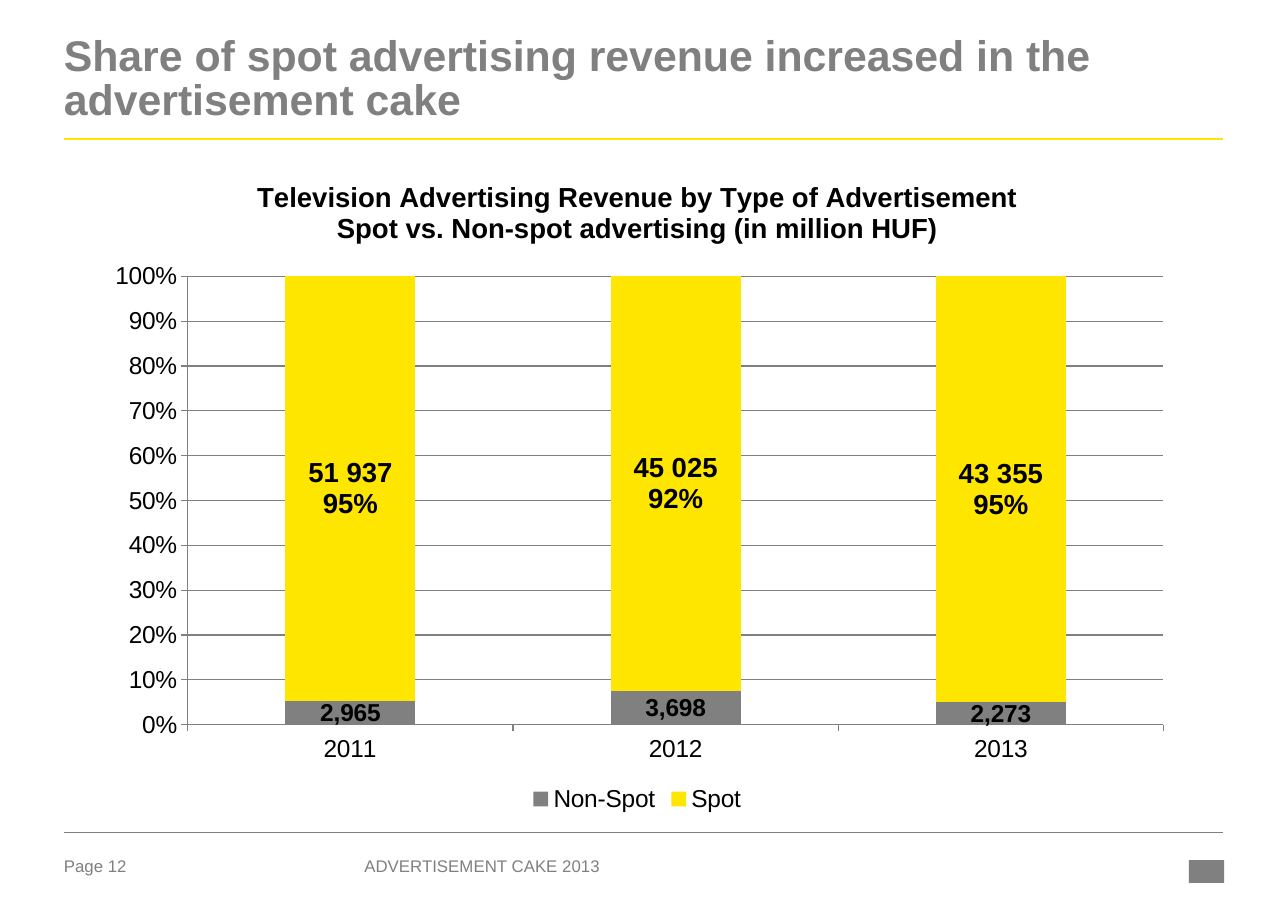
from dataclasses import dataclass

from lxml import etree
from pptx import Presentation
from pptx.chart.data import CategoryChartData
from pptx.dml.color import RGBColor
from pptx.enum.chart import XL_CHART_TYPE, XL_LABEL_POSITION, XL_LEGEND_POSITION, XL_TICK_MARK
from pptx.enum.shapes import MSO_CONNECTOR, MSO_SHAPE
from pptx.oxml.ns import qn
from pptx.util import Pt

STACKED = XL_CHART_TYPE.COLUMN_STACKED_100
CENTER = XL_LABEL_POSITION.CENTER
BOTTOM = XL_LEGEND_POSITION.BOTTOM
OUTSIDE = XL_TICK_MARK.OUTSIDE
STRAIGHT = MSO_CONNECTOR.STRAIGHT
BLOCK = MSO_SHAPE.RECTANGLE

YEARS = ["2011", "2012", "2013"]
SERIES = {"Non-Spot": [2965, 3698, 2273], "Spot": [51937, 45025, 43355]}
SHARES = ["51 937\n95%", "45 025\n92%", "43 355\n95%"]
HEADING = ("Television Advertising Revenue by Type of Advertisement\n"
           "Spot vs. Non-spot advertising (in million HUF)")
LEFT, RIGHT = 41.8, 800


@dataclass(frozen=True)
class Theme:
    """Colours, font and type sizes of the slide."""
    gray: RGBColor = RGBColor(0x80, 0x80, 0x80)
    yellow: RGBColor = RGBColor(0xFF, 0xE6, 0x00)
    black: RGBColor = RGBColor(0, 0, 0)
    face: str = "Arial"
    title: int = 28
    label: int = 18
    axis: int = 16
    small: int = 11


class Page:
    """Draws styled elements on one slide, in points."""

    def __init__(self, slide, theme):
        self.slide = slide
        self.theme = theme

    def style(self, font, size, color, bold=False):
        font.name = self.theme.face
        font.size = Pt(size)
        font.bold = bold
        font.color.rgb = color

    def fill(self, target, color):
        target.fill.solid()
        target.fill.fore_color.rgb = color

    def format(self, frame, size, color, bold=False):
        for par in frame.paragraphs:
            for run in par.runs:
                self.style(run.font, size, color, bold)

    def text(self, words, box, size, bold=False, space=1.0):
        frame = self.slide.shapes.add_textbox(*map(Pt, box)).text_frame
        frame.word_wrap = True
        frame.margin_left = frame.margin_right = 0
        frame.margin_top = frame.margin_bottom = 0
        frame.text = words
        frame.paragraphs[0].line_spacing = space
        self.format(frame, size, self.theme.gray, bold)

    def rule(self, top, color, width):
        line = self.slide.shapes.add_connector(
            STRAIGHT, Pt(LEFT), Pt(top), Pt(RIGHT), Pt(top))
        line.line.color.rgb = color
        line.line.width = Pt(width)
        etree.SubElement(line._element.spPr, qn("a:effectLst"))

    def block(self, box, color):
        shape = self.slide.shapes.add_shape(BLOCK, *map(Pt, box))
        shape.shadow.inherit = False
        self.fill(shape, color)
        shape.line.fill.background()

    def layout(self, chart, **parts):
        area = chart._chartSpace.chart.plotArea
        for old in area.findall(qn("c:layout")):
            area.remove(old)
        outer = etree.Element(qn("c:layout"))
        area.insert(0, outer)
        manual = etree.SubElement(outer, qn("c:manualLayout"))
        rules = {"layoutTarget": "inner", "xMode": "edge", "yMode": "edge", **parts}
        for name, value in rules.items():
            etree.SubElement(manual, qn(f"c:{name}")).set("val", str(value))

    def axis(self, axis):
        axis.major_tick_mark = OUTSIDE
        axis.format.line.color.rgb = self.theme.gray
        axis.format.line.width = Pt(0.75)
        self.style(axis.tick_labels.font, self.theme.axis, self.theme.black)

    def labels(self, series, size):
        labels = series.data_labels
        labels.show_value = True
        labels.number_format = "#,##0"
        labels.number_format_is_linked = False
        labels.position = CENTER
        self.style(labels.font, size, self.theme.black, True)

    def chart(self, box):
        theme = self.theme
        data = CategoryChartData()
        data.categories = YEARS
        for name, values in SERIES.items():
            data.add_series(name, values)
        chart = self.slide.shapes.add_chart(STACKED, *map(Pt, box), data).chart
        self.style(chart.font, theme.label, theme.black)
        chart.has_title = True
        chart.chart_title.include_in_layout = False
        title = chart.chart_title.text_frame
        title.text = HEADING
        self.format(title, theme.label, theme.black, True)
        chart.has_legend = True
        chart.legend.position = BOTTOM
        chart.legend.include_in_layout = False
        self.style(chart.legend.font, theme.axis, theme.black)

        scale = chart.value_axis
        self.axis(chart.category_axis)
        self.axis(scale)
        scale.minimum_scale, scale.maximum_scale, scale.major_unit = 0, 1, 0.1
        scale.tick_labels.number_format = "0%"
        scale.tick_labels.number_format_is_linked = False
        scale.has_major_gridlines = True
        scale.major_gridlines.format.line.color.rgb = theme.gray
        scale.major_gridlines.format.line.width = Pt(0.75)

        plot = chart.plots[0]
        plot.gap_width, plot.overlap = 150, 100
        plot.vary_by_categories = False
        colors = [theme.gray, theme.yellow]
        sizes = [theme.axis, theme.label]
        for series, color, size in zip(plot.series, colors, sizes):
            self.fill(series.format, color)
            self.labels(series, size)
        spot = plot.series[1]
        for index, share in enumerate(SHARES):
            label = spot.points[index].data_label
            label.text_frame.text = share
            self.format(label.text_frame, theme.label, theme.black, True)
            label.position = CENTER
        self.layout(chart, x=0.09, y=0.18, w=0.89, h=0.68)


def main():
    deck = Presentation()
    deck.slide_width, deck.slide_height = Pt(842.4), Pt(597.6)
    theme = Theme()
    page = Page(deck.slides.add_slide(deck.slide_layouts[6]), theme)
    page.text("Page 12", (LEFT, 559.5, 61, 17), theme.small)
    page.block((777.6, 562.3, 23, 15), theme.gray)
    page.rule(90.7, theme.yellow, 1.5)
    page.rule(544.3, theme.gray, 0.25)
    page.text("Share of spot advertising revenue increased in the advertisement cake",
              (LEFT, 23.8, RIGHT - LEFT, 67.7), theme.title, True, 0.85)
    page.text("ADVERTISEMENT CAKE 2013", (238.3, 559.5, 316, 17), theme.small)
    page.chart((58.3, 103, 717, 431.3))
    deck.save("out.pptx")


if __name__ == "__main__":
    main()
